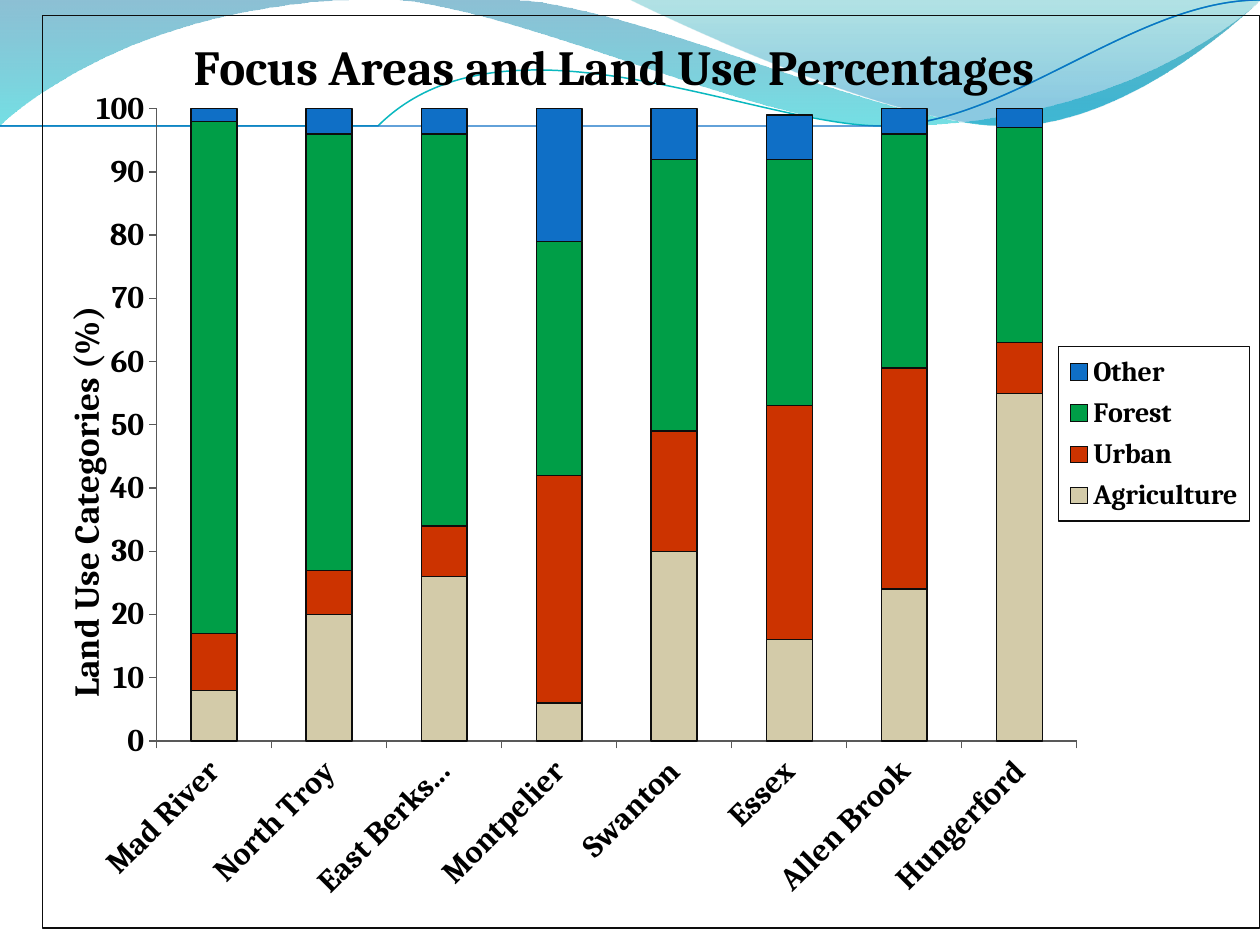
from dataclasses import dataclass

from lxml import etree
from pptx import Presentation
from pptx.chart.data import CategoryChartData
from pptx.dml.color import RGBColor
from pptx.enum.chart import XL_CHART_TYPE as ChartType, XL_LEGEND_POSITION as LegendSpot, XL_TICK_MARK as Tick
from pptx.oxml import parse_xml
from pptx.oxml.ns import nsdecls, qn
from pptx.util import Inches, Pt


@dataclass(frozen=True)
class Theme:
    font: str = "Cambria"
    text: str = "000000"
    outline: str = "0D0D0D"
    axis: str = "595959"
    title: int = 28
    axis_title: int = 20
    tick: int = 18
    legend: int = 16
    hairline: float = 0.75
    farming: str = "D3CBA9"
    urban: str = "CC3300"
    forest: str = "009E47"
    other: str = "0F6FC6"
    teal: str = "0AB8BF"
    band: tuple = ((0, "0074A1", 45), (1, "00C6CF", 55))
    crest: tuple = ((0, "00A1A9", 30), (0.8, "008BBF", 45))


THEME = Theme()

BAND = [(0, 0), (4.4, -0.01), (4.76, 0.17, 6.64, 0.63, 7.58, 0.63),
        (8.53, 0.63, 9.58, 0.26, 10, 0.09), (10.01, 0.36),
        (9.83, 0.44, 8.7, 0.76, 7.46, 0.75), (6.22, 0.75, 3.82, 0.28, 2.57, 0.34),
        (1.29, 0.36, 0.46, 0.83, -0.01, 1.13), (0, 0)]
CREST = [(4.79, -0.01), (5.09, 0.11, 6.82, 0.62, 7.69, 0.65),
         (8.56, 0.69, 9.61, 0.32, 10, 0.21), (10, 0), (4.79, -0.01)]
TEAL_WAVE = [(0, 1.11), (0.48, 0.93, 1.58, 0.57, 2.77, 0.52),
             (3.95, 0.47, 5.93, 0.89, 7.13, 0.8), (8.33, 0.71, 9.38, 0.15, 9.98, -0.02)]
BLUE_WAVE = [(0, 1.04), (0.47, 0.96, 1.64, 0.61, 2.83, 0.56),
             (4.03, 0.51, 5.97, 0.84, 7.17, 0.75), (8.36, 0.67, 9.41, 0.21, 10, 0.06)]

AREAS = ["Mad River", "North Troy", "East Berkshire", "Montpelier",
         "Swanton", "Essex", "Allen Brook", "Hungerford"]
LAND_USE = [("Agriculture", THEME.farming, (8, 20, 26, 6, 30, 16, 24, 55)),
            ("Urban", THEME.urban, (9, 7, 8, 36, 19, 37, 35, 8)),
            ("Forest", THEME.forest, (81, 69, 62, 37, 43, 39, 37, 34)),
            ("Other", THEME.other, (2, 4, 4, 21, 8, 7, 4, 3))]


class SlideBuilder:
    """Adds styled elements to the current slide."""

    def __init__(self, theme, slide):
        self.theme, self.slide = theme, slide

    def curve(self, segments, closed):
        (start, *rest) = segments
        builder = self.slide.shapes.build_freeform(*start, scale=Inches(1))
        points = [pair for seg in rest for pair in zip(seg[::2], seg[1::2])]
        builder.add_line_segments(points, close=closed)
        shape = builder.convert_to_shape()
        shape.shadow.inherit = False
        steps = iter(list(shape._element.iter(qn("a:lnTo"))))
        for seg in rest:
            first = next(steps)
            if len(seg) == 6:
                bezier = etree.Element(qn("a:cubicBezTo"))
                first.addprevious(bezier)
                for step in (first, next(steps), next(steps)):
                    bezier.append(step[0])
                    step.getparent().remove(step)
        return shape

    def ribbon(self, segments, stops):
        shape = self.curve(segments, True)
        shape.line.fill.background()
        shape.fill.gradient()
        shape.fill.gradient_angle = 270
        for stop, (position, color, alpha) in zip(shape.fill.gradient_stops, stops):
            stop.position = position
            stop.color.rgb = RGBColor.from_string(color)
        tones = shape._element.spPr.iter(qn("a:srgbClr"))
        for tone, (position, color, alpha) in zip(tones, stops):
            etree.SubElement(tone, qn("a:alpha")).set("val", str(alpha * 1000))

    def wave(self, segments, color, width):
        shape = self.curve(segments, False)
        shape.fill.background()
        self.stroke(shape.line, color, width)

    def stroke(self, line, color, width):
        line.color.rgb = RGBColor.from_string(color)
        line.width = Pt(width)

    def style(self, font, size):
        font.name, font.size, font.bold = self.theme.font, Pt(size), True
        font.color.rgb = RGBColor.from_string(self.theme.text)

    def place(self, element, index, inner=False, **spots):
        for old in element.findall(qn("c:layout")):
            element.remove(old)
        target = '<c:layoutTarget val="inner"/>' if inner else ""
        modes = "".join(f'<c:{axis}Mode val="edge"/>' for axis in "xy")
        values = "".join(f'<c:{key} val="{value}"/>' for key, value in spots.items())
        element.insert(index, parse_xml(
            f'<c:layout {nsdecls("c")}><c:manualLayout>{target}{modes}{values}'
            '</c:manualLayout></c:layout>'))

    def frame(self):
        return parse_xml(
            f'<c:spPr {nsdecls("c", "a")}><a:noFill/><a:ln w="{Pt(self.theme.hairline)}">'
            f'<a:solidFill><a:srgbClr val="{self.theme.outline}"/></a:solidFill></a:ln></c:spPr>')

    def heading(self, title, text, size, x, y):
        span = title.text_frame.paragraphs[0].add_run()
        span.text = text
        self.style(span.font, size)
        self.place(title._element, 1, x=x, y=y)

    def axis(self, axis):
        axis.has_major_gridlines = False
        axis.major_tick_mark, axis.minor_tick_mark = Tick.OUTSIDE, Tick.NONE
        self.style(axis.tick_labels.font, self.theme.tick)
        self.stroke(axis.format.line, self.theme.axis, self.theme.hairline)

    def legend(self, chart):
        chart.has_legend = True
        legend = chart.legend
        legend.position, legend.include_in_layout = LegendSpot.RIGHT, False
        self.style(legend.font, self.theme.legend)
        legend._element.find(qn("c:txPr")).addprevious(self.frame())
        self.place(legend._element, 1, x=0.835, y=0.363, w=0.157, h=0.191)

    def stacked_columns(self, box, title, value_title, categories, series):
        data = CategoryChartData(number_format="0")
        data.categories = categories
        for name, color, values in series:
            data.add_series(name, values)
        chart = self.slide.shapes.add_chart(
            ChartType.COLUMN_STACKED, *map(Inches, box), data).chart
        self.style(chart.font, 10)
        chart._chartSpace.chart.addnext(self.frame())
        chart.has_title = True
        self.heading(chart.chart_title, title, self.theme.title, 0.117, 0.013)
        plot = chart.plots[0]
        plot.gap_width, plot.overlap, plot.vary_by_categories = 150, 100, False
        for item, (name, color, values) in zip(plot.series, series):
            item.format.fill.solid()
            item.format.fill.fore_color.rgb = RGBColor.from_string(color)
            self.stroke(item.format.line, self.theme.outline, self.theme.hairline)
        names, scale = chart.category_axis, chart.value_axis
        for axis in (names, scale):
            self.axis(axis)
        names._element.find(qn("c:txPr")).find(qn("a:bodyPr")).set("rot", "-2700000")
        scale.minimum_scale, scale.maximum_scale, scale.major_unit = 0, 100, 10
        scale.tick_labels.number_format = "0"
        scale.tick_labels.number_format_is_linked = False
        scale.has_title = True
        self.heading(scale.axis_title, value_title, self.theme.axis_title, 0.012, 0.312)
        scale.axis_title.text_frame._txBody.bodyPr.set("rot", "-5400000")
        scale.axis_title.text_frame._txBody.bodyPr.set("vert", "horz")
        self.legend(chart)
        self.place(chart._chartSpace.chart.plotArea, 0, inner=True,
                   x=0.094, y=0.102, w=0.756, h=0.693)


def main():
    deck = Presentation()
    deck.slide_width, deck.slide_height = Inches(10), Inches(7.5)
    page = SlideBuilder(THEME, deck.slides.add_slide(deck.slide_layouts[6]))
    page.ribbon(BAND, THEME.band)
    page.ribbon(CREST, THEME.crest)
    page.wave(TEAL_WAVE, THEME.teal, 0.85)
    page.wave(BLUE_WAVE, THEME.other, THEME.hairline)
    page.stacked_columns((0.33, 0.12, 9.67, 7.25), "Focus Areas and Land Use Percentages",
                         "Land Use Categories (%)", AREAS, LAND_USE)
    deck.save("out.pptx")


if __name__ == "__main__":
    main()
